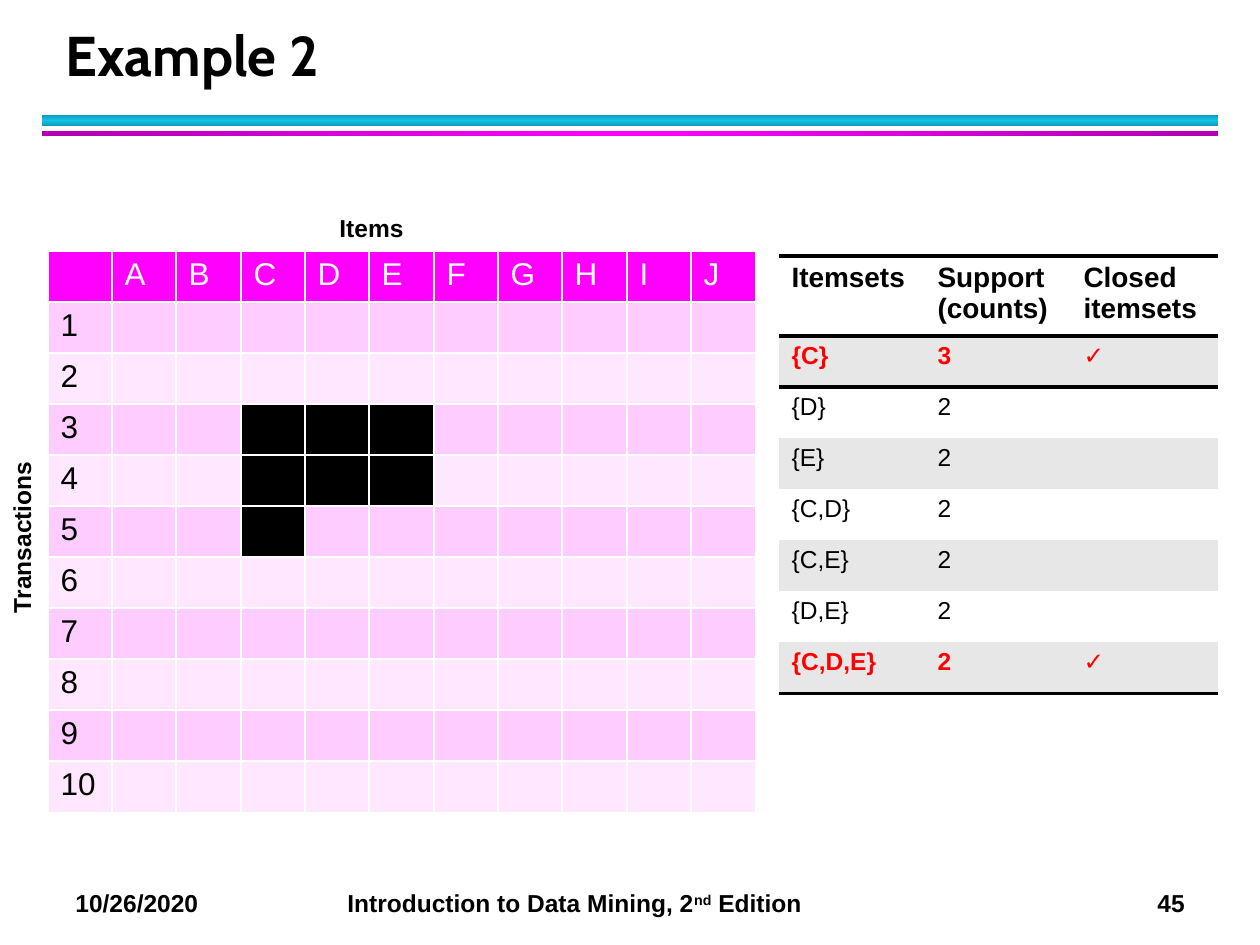
"""Builds the slide with the transaction grid and its closed itemsets."""
from copy import deepcopy

from pptx import Presentation as Deck
from pptx.dml.color import RGBColor as Rgb
from pptx.enum.shapes import MSO_SHAPE as Shape
from pptx.enum.text import MSO_ANCHOR as Anchor
from pptx.oxml import parse_xml as from_xml
from pptx.oxml.ns import nsdecls, qn
from pptx.util import Pt

SCALE = 914400 / 126
HUES = {
    "ink": "000000", "white": "FFFFFF", "red": "FF0000",
    "teal": "0E9BBA", "cyan": "12C2E9", "plum": "B200B2", "pink": "FF00FF",
    "rose": "FFCCFF", "blush": "FFE7FF", "grey": "E7E7E7",
}
PLAIN = "{2D5ABB26-0587-4C30-8999-92F81FD0307C}"
ITEMS = "ABCDEFGHIJ"
BASKETS = {3: "CDE", 4: "CDE", 5: "C"}
HEADS = ["Itemsets", "Support\n(counts)", "Closed itemsets"]
SETS = [("{C}", 3, True), ("{D}", 2, False), ("{E}", 2, False),
        ("{C,D}", 2, False), ("{C,E}", 2, False), ("{D,E}", 2, False),
        ("{C,D,E}", 2, True)]


def px(n):
    return round(n * SCALE)


def split(total, count):
    marks = [total * i // count for i in range(count + 1)]
    return [b - a for a, b in zip(marks, marks[1:])]


def add_run(par, text, size, hue="ink", bold=True, face="Arial"):
    run = par.add_run()
    run.text = text
    font = run.font
    font.name, font.size, font.bold = face, Pt(size), bold
    font.color.rgb = Rgb.from_string(HUES[hue])
    return run


def add_text(slide, box, turn=0):
    shape = slide.shapes.add_textbox(*map(px, box))
    shape.rotation = turn
    shape.text_frame.word_wrap = True
    return shape.text_frame


def add_bar(slide, box, edge, core, angle):
    bar = slide.shapes.add_shape(Shape.RECTANGLE, *map(px, box))
    bar.shadow.inherit = False
    bar.line.fill.background()
    bar.fill.gradient()
    bar.fill.gradient_angle = angle
    stops = bar._element.spPr.find(".//" + qn("a:gsLst"))
    stops.append(deepcopy(stops[0]))
    for stop, hue, spot in zip(bar.fill.gradient_stops, (edge, core, edge), (0, 0.5, 1)):
        stop.color.rgb = Rgb.from_string(HUES[hue])
        stop.position = spot


def add_table(slide, left, top, cols, rows):
    frame = slide.shapes.add_table(
        len(rows), len(cols), px(left), px(top), px(sum(cols)), px(sum(rows)))
    table = frame.table
    table._tbl.tblPr.find(qn("a:tableStyleId")).text = PLAIN
    for parts, sizes, key in ((table.columns, cols, "width"), (table.rows, rows, "height")):
        for part, size in zip(parts, sizes):
            setattr(part, key, px(size))
    return table


def set_cell(cell, text, fill, size, hue="ink", bold=False):
    cell.fill.solid()
    cell.fill.fore_color.rgb = Rgb.from_string(HUES[fill])
    frame = cell.text_frame
    for i, line in enumerate(text.split("\n") if text else []):
        par = frame.add_paragraph() if i else frame.paragraphs[0]
        add_run(par, line, size, hue, bold)


def set_edges(cell, sides, hue, width):
    props = cell._tc.get_or_add_tcPr()
    for i, side in enumerate(sides):
        props.insert(i, from_xml(
            f'<a:ln{side} {nsdecls("a")} w="{Pt(width)}"><a:solidFill>'
            f'<a:srgbClr val="{HUES[hue]}"/></a:solidFill></a:ln{side}>'))


def add_grid(slide):
    table = add_table(slide, 48, 251, split(708, 11), split(562, 11))
    for row in range(11):
        for col, item in enumerate(" " + ITEMS):
            cell = table.cell(row, col)
            if row == 0:
                set_cell(cell, item.strip(), "pink", 18, "white")
            else:
                band = "rose" if row % 2 else "blush"
                fill = "ink" if item in BASKETS.get(row, "") else band
                set_cell(cell, "" if col else str(row), fill, 18)
            set_edges(cell, "LRTB", "white", 1)


def add_sets(slide):
    table = add_table(slide, 779, 256, split(439, 3), [80] + split(358, 7))
    for col, head in enumerate(HEADS):
        cell = table.cell(0, col)
        set_cell(cell, head, "white", 16, bold=True)
        set_edges(cell, "TB", "ink", 2)
    for row, (name, count, closed) in enumerate(SETS, 1):
        fill = "grey" if row % 2 else "white"
        hue = "red" if closed else "ink"
        for col, text in enumerate((name, str(count), "✓" if closed else "")):
            cell = table.cell(row, col)
            set_cell(cell, text, fill, 14, hue, closed)
            if row == 1:
                set_edges(cell, "T", "ink", 2)
            if row == len(SETS):
                set_edges(cell, "B", "ink", 2)


def add_title(slide, text):
    frame = add_text(slide, (53, 21, 1142, 73))
    frame.vertical_anchor = Anchor.BOTTOM
    par = frame.paragraphs[0]
    par.line_spacing = Pt(36)
    add_run(par, text, 32, face="Cabin")


def add_foot(slide):
    par = add_text(slide, (63, 882, 1176, 43)).paragraphs[0]
    tabs = "".join(f'<a:tab pos="{px(n)}" algn="l"/>' for n in (272, 1082))
    par._p.get_or_add_pPr().append(
        from_xml(f'<a:tabLst {nsdecls("a")}>{tabs}</a:tabLst>'))
    add_run(par, "10/26/2020\tIntroduction to Data Mining, 2", 14)
    add_run(par, "nd", 14).font._element.set("baseline", "30000")
    add_run(par, " Edition\t45", 14)


def main():
    deck = Deck()
    deck.slide_width, deck.slide_height = px(1260), px(945)
    slide = deck.slides.add_slide(deck.slide_layouts[6])
    add_bar(slide, (42, 115, 1176, 11), "teal", "cyan", 90)
    add_bar(slide, (42, 131, 1176, 5), "plum", "pink", 0)
    add_foot(slide)
    add_title(slide, "Example 2")
    add_grid(slide)
    for text, box, turn in (("Items", (327, 207, 97, 50), 0),
                            ("Transactions", (-68, 507, 187, 50), 270)):
        add_run(add_text(slide, box, turn).paragraphs[0], text, 14)
    add_sets(slide)
    deck.save("out.pptx")


if __name__ == "__main__":
    main()
